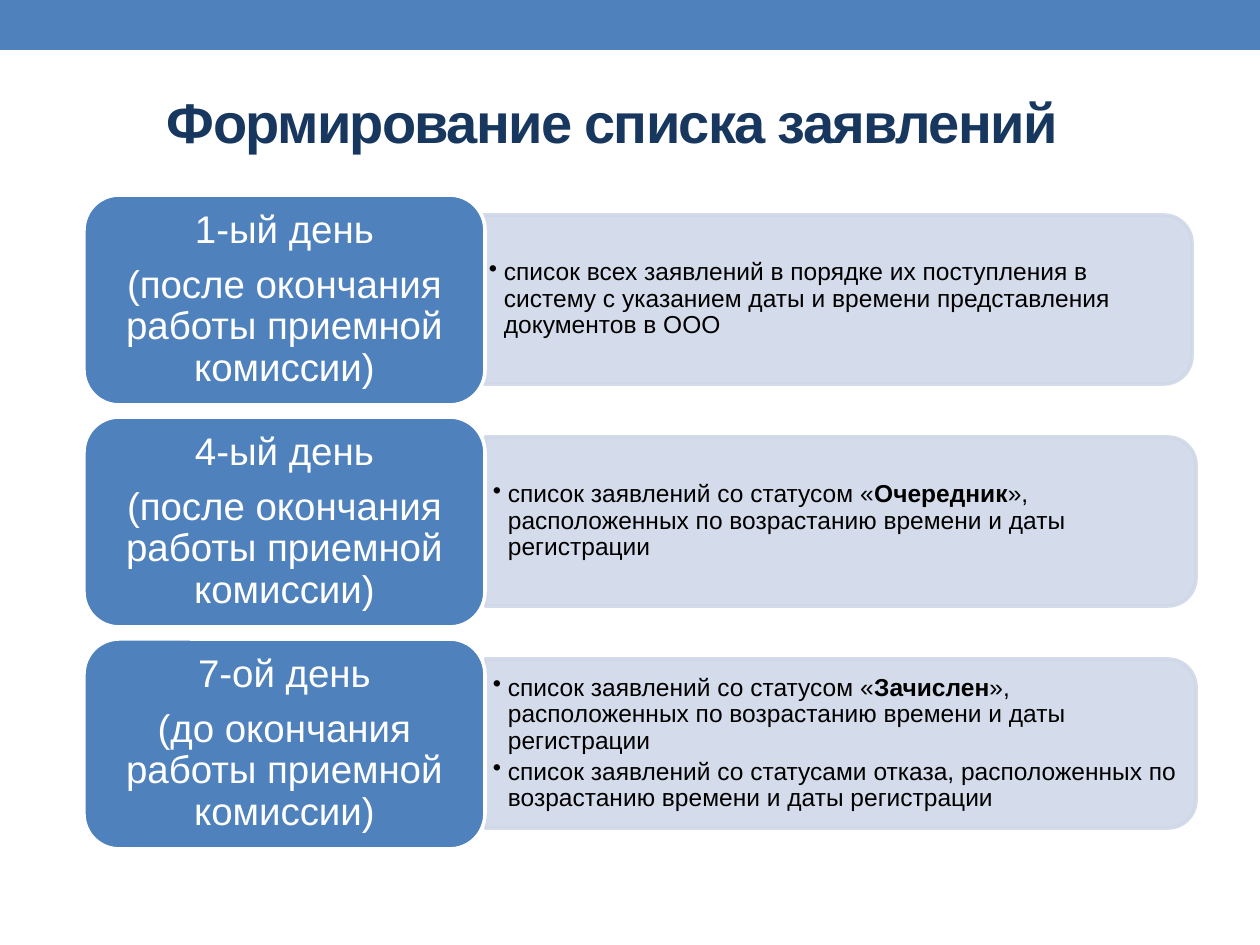
from lxml import etree
from pptx import Presentation
from pptx.dml.color import RGBColor
from pptx.enum.shapes import MSO_SHAPE
from pptx.enum.text import MSO_ANCHOR, PP_ALIGN
from pptx.oxml.ns import qn
from pptx.util import Emu, Pt

RECT = MSO_SHAPE.RECTANGLE
CARD = MSO_SHAPE.ROUNDED_RECTANGLE
PANE = MSO_SHAPE.ROUND_2_SAME_RECTANGLE
MIDDLE = MSO_ANCHOR.MIDDLE
LEFT, CENTER = PP_ALIGN.LEFT, PP_ALIGN.CENTER

BLUE, PALE, NAVY = "4F81BD", "D0D8E8", "17375E"
WHITE, BLACK = "FFFFFF", "000000"

AFTER = "(после окончания работы приемной комиссии)"
BEFORE = "(до окончания работы приемной комиссии)"
ORDER = "», расположенных по возрастанию времени и даты регистрации"
STATUS = "список заявлений со статусом «"
ROWS = [
    (481, ["1-ый день", AFTER], [
        ["список всех заявлений в порядке их поступления в систему "
         "с указанием даты и времени представления документов в ООО"]]),
    (485, ["4-ый день", AFTER], [[STATUS, "Очередник", ORDER]]),
    (485, ["7-ой день", BEFORE], [
        [STATUS, "Зачислен", ORDER],
        ["список заявлений со статусами отказа, расположенных "
         "по возрастанию времени и даты регистрации"]]),
]


def px(n):
    return Emu(round(n * 914400 / 126))


def tint(code):
    return RGBColor.from_string(code)


def style(obj, vals):
    for name, val in vals.items():
        setattr(obj, name, val)


def add_shape(slide, kind, box, fill, line=None):
    shape = slide.shapes.add_shape(kind, *map(px, box))
    shape.shadow.inherit = False
    shape.fill.solid()
    shape.fill.fore_color.rgb = tint(fill)
    if line:
        shape.line.color.rgb = tint(line)
        shape.line.width = Pt(2.08)
    else:
        shape.line.fill.background()
    return shape


def set_frame(frame, side, edge):
    style(frame, {
        "word_wrap": True, "vertical_anchor": MIDDLE,
        "margin_left": px(side), "margin_right": px(side),
        "margin_top": px(edge), "margin_bottom": px(edge)})


def add_run(para, text, size, color, bold=False):
    run = para.add_run()
    run.text = text
    style(run.font, {"name": "Arial", "size": Pt(size), "bold": bold})
    run.font.color.rgb = tint(color)
    return run


def fill_text(frame, paras, size, color, align, gap):
    for i, parts in enumerate(paras):
        para = frame.add_paragraph() if i else frame.paragraphs[0]
        style(para, {"alignment": align, "line_spacing": 0.9,
                     "space_after": Pt(gap)})
        for j, text in enumerate(parts):
            add_run(para, text, size, color, j == 1)


def add_bullet(para):
    props = para._p.get_or_add_pPr()
    props.set("marL", str(px(15)))
    props.set("indent", str(-px(15)))
    etree.SubElement(props, qn("a:buChar")).set("char", "•")


def add_title(slide, box, text):
    title = slide.shapes.title
    left, top, width, height = map(px, box)
    style(title, {"left": left, "top": top, "width": width, "height": height})
    set_frame(title.text_frame, 13, 6)
    para = title.text_frame.paragraphs[0]
    para.alignment = LEFT
    run = add_run(para, text, 32, NAVY, True)
    run.font._element.set("spc", "-100")


def add_pane(slide, box, items):
    left, top, width, height = box
    shift = (width - height) / 2
    pane = add_shape(slide, PANE,
                     (left + shift, top - shift, height, width), PALE, PALE)
    pane.rotation = 90
    for color in pane._element.spPr.iter(qn("a:srgbClr")):
        etree.SubElement(color, qn("a:alpha")).set("val", "90000")
    area = (left, top + 8, width - 8, height - 16)
    frame = slide.shapes.add_textbox(*map(px, area)).text_frame
    set_frame(frame, 8, 4)
    fill_text(frame, items, 14, BLACK, LEFT, 2.5)
    for para in frame.paragraphs:
        add_bullet(para)


def add_card(slide, box, lines):
    card = add_shape(slide, CARD, box, BLUE, WHITE)
    set_frame(card.text_frame, 11, 6)
    fill_text(card.text_frame, [[line] for line in lines],
              22, WHITE, CENTER, 7.5)


def add_row(slide, box, edge, lines, items):
    left, top, width, height = box
    add_pane(slide, (edge, top + 20, 711, height - 41), items)
    add_card(slide, (left, top, width, height), lines)


def main():
    deck = Presentation()
    style(deck, {"slide_width": px(1260), "slide_height": px(945)})
    slide = deck.slides.add_slide(deck.slide_layouts[5])
    add_shape(slide, RECT, (0, 0, 1260, 50), BLUE)
    add_title(slide, (154, 66, 1134, 110), "Формирование списка заявлений")
    for i, row in enumerate(ROWS):
        add_row(slide, (84, 195 + 222 * i, 401, 210), *row)
    deck.save("out.pptx")


if __name__ == "__main__":
    main()
